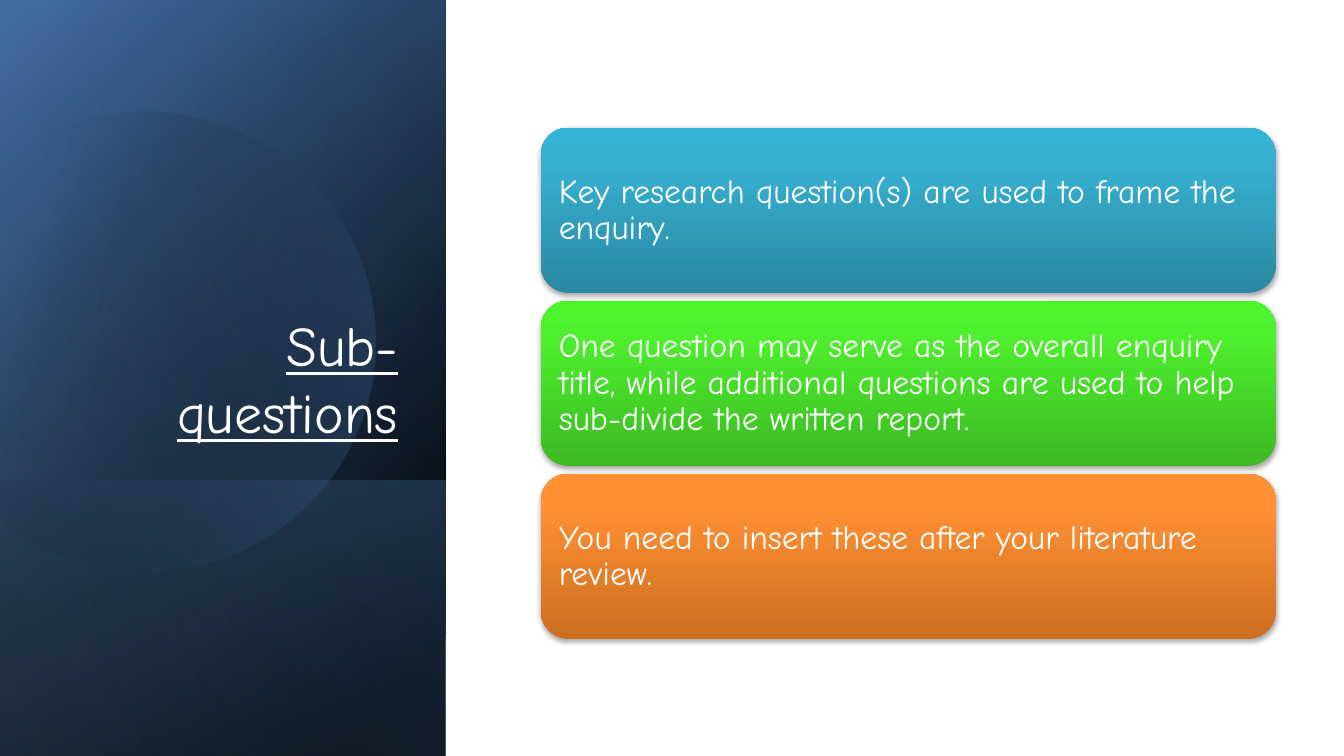
import itertools
import math
from dataclasses import dataclass

import lxml.etree
import pptx
import pptx.dml.color
import pptx.enum.shapes
import pptx.enum.text
import pptx.oxml.ns
import pptx.util

Cm = pptx.util.Cm
Pt = pptx.util.Pt
qn = pptx.oxml.ns.qn
Shapes = pptx.enum.shapes.MSO_SHAPE
Anchor = pptx.enum.text.MSO_ANCHOR
Align = pptx.enum.text.PP_ALIGN


@dataclass(frozen=True)
class Theme:
    font: str = "Comic Neue"
    title_size: int = 40
    card_size: int = 24
    text: str = "FFFFFF"
    black: str = "000000"
    blue: str = "4F81BD"
    deep_blue: str = "376092"
    pale_blue: str = "95B3D7"
    # Each card runs from its dark bottom to its bright top
    teal: tuple = ("2A88A2", "37B1D2", "34B4D6")
    green: tuple = ("3CB923", "4EF02E", "4CF52A")
    orange: tuple = ("CC6E20", "FF9034", "FF9136")


class SlideBuilder:
    def __init__(self, slide, theme):
        self.slide = slide
        self.theme = theme

    def add_color(self, parent, color, opacity):
        node = lxml.etree.SubElement(parent, qn("a:srgbClr"), val=color)
        if opacity < 100:
            lxml.etree.SubElement(node, qn("a:alpha"), val=str(opacity * 1000))

    def paint(self, shape, stops, angle):
        """Fill with (position, colour, opacity) stops; angle runs clockwise."""
        shape.shadow.inherit = False
        shape.line.fill.background()
        shape.fill.gradient()
        shape.fill.gradient_angle = 360 - angle
        stop_list = shape.element.spPr.find(qn("a:gradFill")).find(qn("a:gsLst"))
        for default_stop in list(stop_list):
            stop_list.remove(default_stop)
        for position, color, opacity in stops:
            stop = lxml.etree.SubElement(stop_list, qn("a:gs"), pos=str(position * 1000))
            self.add_color(stop, color, opacity)

    def panel(self, top, width, height, stops, angle):
        """A mirrored rectangle turned by 90 degrees, placed as it shows."""
        shape = self.slide.shapes.add_shape(
            Shapes.RECTANGLE, Cm((width - height) / 2), Cm(top + (height - width) / 2),
            Cm(height), Cm(width))
        shape.rotation = 90
        shape.element.spPr.find(qn("a:xfrm")).set("flipH", "1")
        self.paint(shape, stops, angle)

    def cut_circle(self, center_x, center_y, radius, bearings, rotation, stops, angle):
        """A circle cut by a chord; one Bézier curve joins each two bearings."""
        def spot(degree, tangent=0.0):
            turn = math.radians(degree)
            return (Cm(center_x + radius * (math.cos(turn) - tangent * math.sin(turn))),
                    Cm(center_y + radius * (math.sin(turn) + tangent * math.cos(turn))))

        points = []
        for start, end in itertools.pairwise(bearings):
            tangent = 4 / 3 * math.tan(math.radians(end - start) / 4)
            points += [spot(start, tangent), spot(end, -tangent), spot(end)]
        outline = self.slide.shapes.build_freeform(*spot(bearings[0]))
        outline.add_line_segments(points, close=True)
        shape = outline.convert_to_shape()

        # Join every three straight segments into one curve
        segments = list(shape.element.spPr.iter(qn("a:lnTo")))
        for first in range(0, len(segments), 3):
            curve = lxml.etree.Element(qn("a:cubicBezTo"))
            segments[first].addprevious(curve)
            for segment in segments[first:first + 3]:
                curve.append(segment[0])
                segment.getparent().remove(segment)
        shape.rotation = rotation
        self.paint(shape, stops, angle)

    def style_text(self, frame, text, size):
        frame.word_wrap = True
        frame.text = text
        paragraph = frame.paragraphs[0]
        paragraph.font.name = self.theme.font
        paragraph.font.size = Pt(size)
        paragraph.font.color.rgb = pptx.dml.color.RGBColor.from_string(self.theme.text)
        return paragraph

    def title(self, text, left, top, width, height):
        heading = self.slide.shapes.title
        heading.left, heading.top = Cm(left), Cm(top)
        heading.width, heading.height = Cm(width), Cm(height)
        heading.text_frame.vertical_anchor = Anchor.BOTTOM
        paragraph = self.style_text(heading.text_frame, text, self.theme.title_size)
        paragraph.alignment = Align.RIGHT
        paragraph.font.underline = True
        # Bring the title in front of the panels
        self.slide.shapes.element.append(heading.element)

    def card(self, text, colors, left, top, width, height):
        shape = self.slide.shapes.add_shape(
            Shapes.ROUNDED_RECTANGLE, Cm(left), Cm(top), Cm(width), Cm(height))
        self.paint(shape, [(position, color, 100)
                           for position, color in zip((0, 80, 100), colors)], 270)
        shadow = lxml.etree.SubElement(
            shape.element.spPr.find(qn("a:effectLst")), qn("a:outerShdw"),
            blurRad=str(Pt(3.1)), dist=str(Pt(1.8)), dir="5400000", rotWithShape="0")
        self.add_color(shadow, self.theme.black, 35)
        frame = shape.text_frame
        frame.vertical_anchor = Anchor.MIDDLE
        frame.margin_left = frame.margin_right = Cm(0.25)
        frame.margin_top = frame.margin_bottom = Cm(0.25)
        paragraph = self.style_text(frame, text, self.theme.card_size)
        paragraph.alignment = Align.LEFT
        paragraph.line_spacing = 0.9


def main():
    theme = Theme()
    presentation = pptx.Presentation()
    presentation.slide_width = Cm(33.87)
    presentation.slide_height = Cm(19.05)
    slide = presentation.slides.add_slide(presentation.slide_layouts[5])
    builder = SlideBuilder(slide, theme)

    # Blue side panel, built from layered gradients
    side_width, side_height, foot_height = 11.23, 19.05, 6.95
    builder.panel(0, side_width, side_height,
                  [(8, theme.black, 100), (100, theme.deep_blue, 100)], 50)
    builder.panel(0, side_width, side_height,
                  [(0, theme.black, 0), (99, theme.blue, 46)], 30)
    builder.panel(side_height - foot_height, side_width, foot_height,
                  [(2, theme.blue, 29), (100, theme.black, 30)], 130)
    builder.cut_circle(3.64, 8.5, 5.8, (-118, -90, 0, 90, 150), 343.9,
                       [(29, theme.black, 0), (100, theme.blue, 43)], 30)
    builder.panel(0, side_width, side_height,
                  [(0, theme.black, 0), (99, theme.pale_blue, 11)], 120)

    # Title
    builder.title("Sub-questions", 1.63, 4.68, 8.66, 6.65)

    # Advice cards
    advice = [
        ("Key research question(s) are used to frame the enquiry.", theme.teal),
        ("One question may serve as the overall enquiry title, while additional "
         "questions are used to help sub-divide the written report.", theme.green),
        ("You need to insert these after your literature review.", theme.orange),
    ]
    card_height, card_gap = 4.16, 0.2
    for row, (text, colors) in enumerate(advice):
        builder.card(text, colors, 13.63, 3.22 + row * (card_height + card_gap),
                     18.52, card_height)

    presentation.save("out.pptx")


if __name__ == "__main__":
    main()
